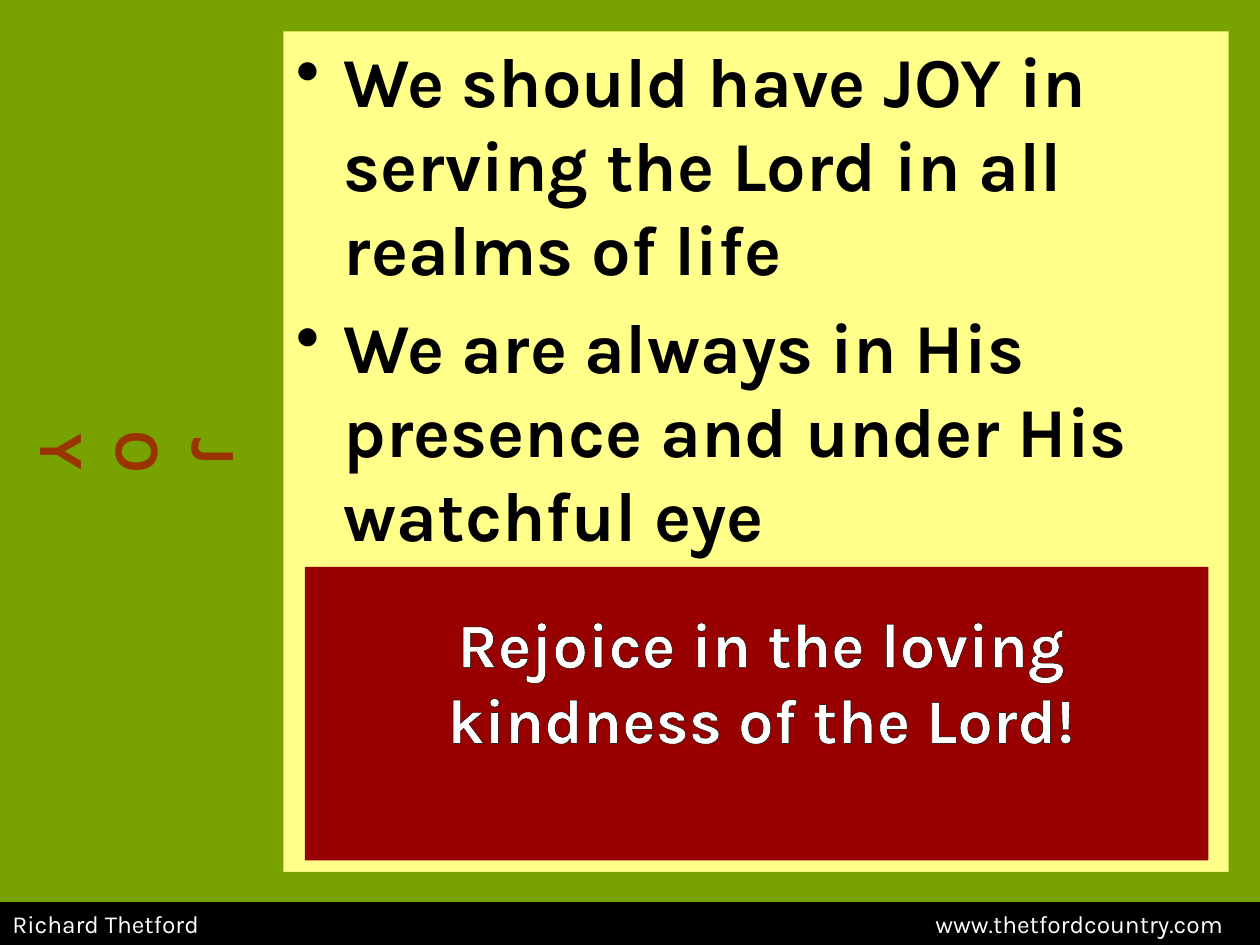
from dataclasses import dataclass

from lxml import etree
from pptx import Presentation
from pptx.dml.color import RGBColor
from pptx.enum.shapes import MSO_SHAPE
from pptx.enum.text import MSO_ANCHOR, PP_ALIGN
from pptx.oxml.ns import qn
from pptx.util import Inches, Pt

RECTANGLE = MSO_SHAPE.RECTANGLE
LEFT, CENTER = PP_ALIGN.LEFT, PP_ALIGN.CENTER
TOP, MIDDLE = MSO_ANCHOR.TOP, MSO_ANCHOR.MIDDLE

FONT = "Karla"
YELLOW, GREEN, DARK_RED = "FFFF89", "78A200", "990000"
RUST, BLACK, WHITE = "993300", "000000", "FFFFFF"


@dataclass(frozen=True)
class Box:
    left: float
    top: float
    width: float
    height: float

    def lengths(self) -> list:
        return [Inches(n) for n in (self.left, self.top, self.width, self.height)]


@dataclass(frozen=True)
class Panel:
    box: Box
    color: str


FRAME = [
    Panel(Box(0, 0, 2.25, 7.5), GREEN),
    Panel(Box(9.75, 0, 0.25, 7.5), GREEN),
    Panel(Box(0, 0, 10, 0.25), GREEN),
    Panel(Box(0, 6.92, 10, 0.25), GREEN),
]
REJOICE_PANEL = Panel(Box(2.42, 4.5, 7.17, 2.33), DARK_RED)
FOOTER_PANEL = Panel(Box(0, 7.16, 10, 0.34), BLACK)


def rgb(value: str) -> RGBColor:
    return RGBColor.from_string(value)


def add_panel(slide, panel: Panel):
    shape = slide.shapes.add_shape(RECTANGLE, *panel.box.lengths())
    shape.shadow.inherit = False
    shape.fill.solid()
    shape.fill.fore_color.rgb = rgb(panel.color)
    shape.line.fill.background()
    return shape


def outline_letters(run) -> None:
    line = etree.Element(qn("a:ln"), w=str(Pt(0.75)))
    fill = etree.SubElement(line, qn("a:solidFill"))
    etree.SubElement(fill, qn("a:srgbClr"), val=BLACK)
    run.font._element.insert(0, line)


def add_bullet(paragraph, indent: float) -> None:
    properties = paragraph._p.get_or_add_pPr()
    properties.set("marL", str(Inches(indent)))
    properties.set("indent", str(Inches(-indent)))
    etree.SubElement(properties, qn("a:buChar"), char="•")


def add_right_tab(paragraph, position: float) -> None:
    tabs = etree.SubElement(paragraph._p.get_or_add_pPr(), qn("a:tabLst"))
    etree.SubElement(tabs, qn("a:tab"), pos=str(Inches(position)), algn="r")


def write_text(shape, lines: list[str], *, size: float, color: str,
               bold: bool = False, align=LEFT, anchor=TOP, wrap: bool = True,
               outlined: bool = False, space_before: float = 0,
               bullet_indent: float = 0, right_tab: float = 0) -> None:
    frame = shape.text_frame
    frame.word_wrap = wrap
    frame.vertical_anchor = anchor
    for index, line in enumerate(lines):
        paragraph = frame.add_paragraph() if index else frame.paragraphs[0]
        paragraph.alignment = align
        paragraph.space_before = Pt(space_before)
        if bullet_indent:
            add_bullet(paragraph, bullet_indent)
        if right_tab:
            add_right_tab(paragraph, right_tab)
        run = paragraph.add_run()
        run.text = line
        run.font.name = FONT
        run.font.size = Pt(size)
        run.font.bold = bold
        run.font.color.rgb = rgb(color)
        if outlined:
            outline_letters(run)


def add_text(slide, box: Box, lines: list[str], **text_format):
    shape = slide.shapes.add_textbox(*box.lengths())
    write_text(shape, lines, **text_format)
    return shape


def main() -> None:
    deck = Presentation()
    deck.slide_width, deck.slide_height = Inches(10), Inches(7.5)
    slide = deck.slides.add_slide(deck.slide_layouts[6])
    slide.background.fill.solid()
    slide.background.fill.fore_color.rgb = rgb(YELLOW)

    for panel in FRAME:
        add_panel(slide, panel)

    joy = add_text(slide, Box(-2.21, 2.71, 6.67, 1.75), ["JOY"], size=36,
                   color=RUST, bold=True, align=CENTER, wrap=False, outlined=True)
    joy.rotation = 90
    joy.text_frame._txBody.bodyPr.set("vert", "wordArtVert")

    add_text(slide, Box(2.25, 0.25, 7.42, 4.33),
             ["We should have JOY in serving the Lord in all realms of life",
              "We are always in His presence and under His watchful eye"],
             size=40, color=BLACK, bold=True, space_before=8, bullet_indent=0.38)

    add_panel(slide, REJOICE_PANEL)
    add_text(slide, Box(2.75, 4.75, 6.58, 1.75),
             ["Rejoice in the loving", "kindness of the Lord!"],
             size=36, color=WHITE, bold=True, align=CENTER, wrap=False, outlined=True)

    footer = add_panel(slide, FOOTER_PANEL)
    write_text(footer, ["Richard Thetford\twww.thetfordcountry.com"],
               size=14, color=WHITE, anchor=MIDDLE, right_tab=9.61)

    deck.save("out.pptx")


if __name__ == "__main__":
    main()
